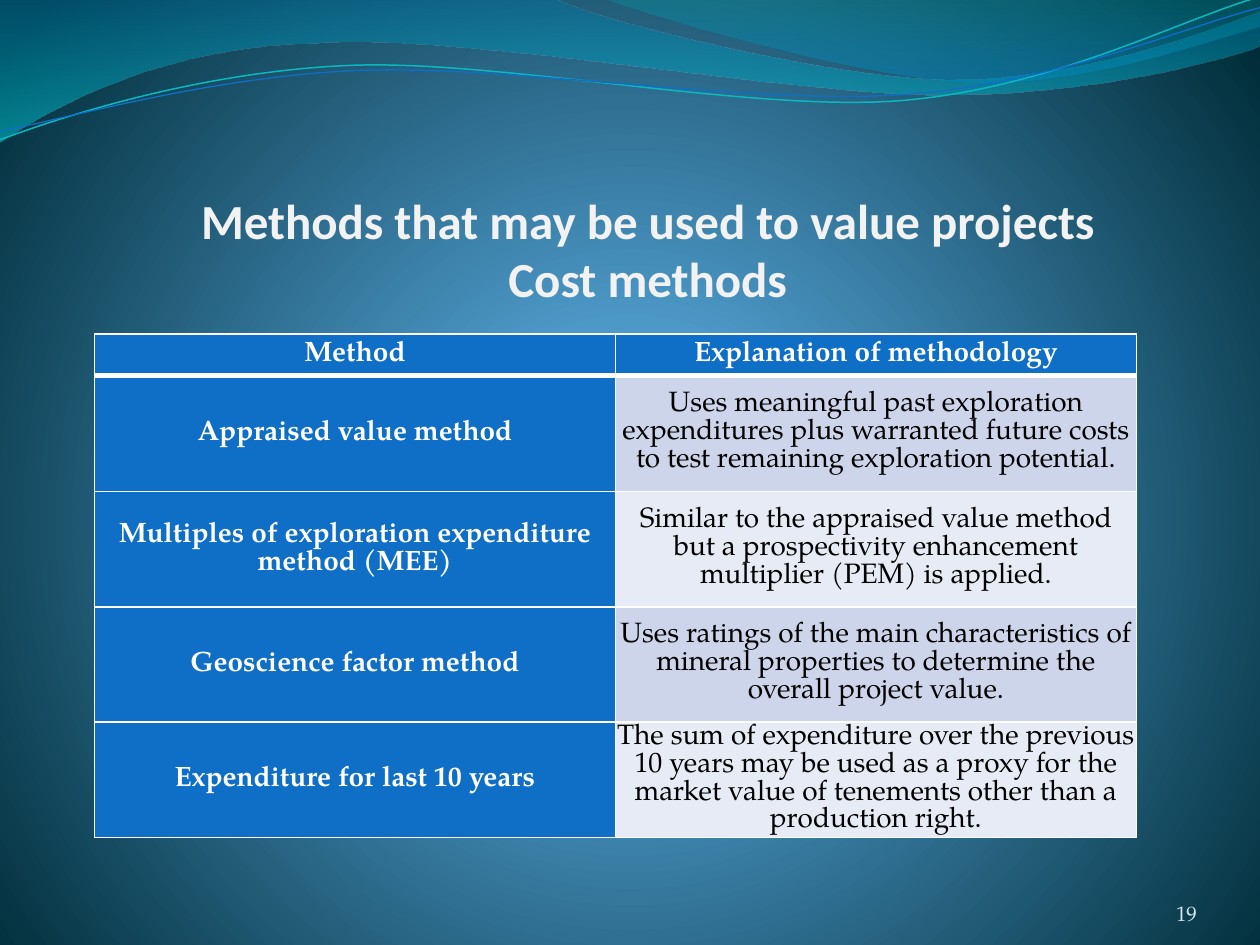
import math

from lxml import etree
from pptx import Presentation, util as u
from pptx.dml.color import RGBColor
from pptx.enum import text as t
from pptx.oxml import ns

WHITE = RGBColor(0xFF, 0xFF, 0xFF)
BLACK = RGBColor(0, 0, 0)
BLUE = RGBColor(0x0F, 0x6F, 0xC6)
TEAL = RGBColor(0x0A, 0xB8, 0xBF)
PALE = RGBColor(0xF2, 0xF2, 0xF2)
MIST = RGBColor(0xD1, 0xEA, 0xEE)
BANDS = RGBColor(0xCC, 0xD5, 0xEA), RGBColor(0xE7, 0xEB, 0xF5)
SERIF, SANS = "TeX Gyre Pagella", "Calibri"
TILT = 357.3

ROWS = [
    ("Method", "Explanation of methodology"),
    ("Appraised value method",
     "Uses meaningful past exploration expenditures plus warranted future "
     "costs to test remaining exploration potential."),
    ("Multiples of exploration expenditure method (MEE)",
     "Similar to the appraised value method but a prospectivity enhancement "
     "multiplier (PEM) is applied."),
    ("Geoscience factor method",
     "Uses ratings of the main characteristics of mineral properties to "
     "determine the overall project value."),
    ("Expenditure for last 10 years",
     "The sum of expenditure over the previous 10 years may be used as a "
     "proxy for the market value of tenements other than a production right."),
]
HEIGHTS = [0.33, 0.92, 0.92, 0.91, 0.92]

# Each curve is a start point, then steps of one point (line) or three (Bezier).
WIDE = [[(0, 0)], [(4.4, -0.01)],
        [(4.76, 0.17), (6.64, 0.63), (7.58, 0.63)],
        [(8.53, 0.63), (9.58, 0.26), (10, 0.09)], [(10.01, 0.36)],
        [(9.83, 0.44), (8.7, 0.76), (7.46, 0.75)],
        [(6.22, 0.75), (3.82, 0.28), (2.57, 0.34)],
        [(1.29, 0.36), (0.46, 0.83), (-0.01, 1.13)], [(0, 0)]]
SMALL = [[(4.79, -0.01)], [(5.09, 0.11), (6.82, 0.62), (7.69, 0.65)],
         [(8.56, 0.69), (9.61, 0.32), (10, 0.21)], [(10, 0)], [(4.79, -0.01)]]
UPPER = [[(0, 1.11)], [(0.48, 0.93), (1.58, 0.57), (2.77, 0.52)],
         [(3.95, 0.47), (5.93, 0.89), (7.13, 0.8)],
         [(8.33, 0.71), (9.38, 0.15), (9.98, -0.02)]]
LOWER = [[(0, 1.04)], [(0.47, 0.96), (1.64, 0.61), (2.83, 0.56)],
         [(4.03, 0.51), (5.97, 0.84), (7.17, 0.75)],
         [(8.36, 0.67), (9.41, 0.21), (10, 0.06)]]


def node(root, tag, **attrs):
    return etree.SubElement(root, ns.qn(tag), {k: str(v) for k, v in attrs.items()})


def clear(root):
    for child in list(root):
        root.remove(child)


def shade(root, stops, centre=None):
    """Fill the first gradient in root with (percent, hex, opacity) stops."""
    grad = root.xpath(".//a:gradFill")[0]
    clear(grad)
    group = node(grad, "a:gsLst")
    for pos, tone, alpha in stops:
        stop = node(group, "a:gs", pos=pos * 1000)
        color = node(stop, "a:srgbClr", val=tone)
        if alpha < 100:
            node(color, "a:alpha", val=alpha * 1000)
    if centre:
        ring = node(grad, "a:path", path="circle")
        node(ring, "a:fillToRect", **{k: v * 1000 for k, v in zip("ltrb", centre)})
    else:
        node(grad, "a:lin", ang=90 * 60000, scaled=1)


def local(point, box, turn):
    """Move a slide point into the frame of a box that is turned by degrees."""
    left, top, width, height = box
    angle = math.radians(-turn)
    x, y = point[0] - left - width / 2, point[1] - top - height / 2
    return (u.Inches(x * math.cos(angle) - y * math.sin(angle) + width / 2),
            u.Inches(x * math.sin(angle) + y * math.cos(angle) + height / 2))


def write(frame, *lines, font=SERIF, size=16, color=WHITE, bold=False,
          align=t.PP_ALIGN.CENTER, gap=0, pitch=None):
    for i, line in enumerate(lines):
        para = frame.add_paragraph() if i else frame.paragraphs[0]
        para.alignment = align
        para.space_before = para.space_after = u.Pt(gap)
        if pitch:
            para.line_spacing = u.Pt(pitch)
        run = para.add_run()
        run.text = line
        run.font.name, run.font.size = font, u.Pt(size)
        run.font.bold, run.font.color.rgb = bold, color


def edge(cell, **widths):
    """Draw white borders; keys are the sides L, R, T and B in points."""
    props = cell._tc.get_or_add_tcPr()
    for i, side in enumerate("LRTB"):
        line = etree.Element(ns.qn("a:ln" + side), w=str(u.Pt(widths.get(side, 1))))
        node(node(line, "a:solidFill"), "a:srgbClr", val=str(WHITE))
        props.insert(i, line)


class Deck:
    def __init__(self):
        self.file = Presentation()
        self.file.slide_width, self.file.slide_height = u.Inches(10), u.Inches(7.5)
        self.slide = self.file.slides.add_slide(self.file.slide_layouts[5])
        self.shapes = self.slide.shapes

    def ground(self, stops, centre):
        self.slide.background.fill.gradient()
        shade(self.slide.element, stops, centre)

    def curve(self, curve, box, close, turn=0):
        left, top, width, height = map(u.Inches, box)
        pen = self.shapes.build_freeform(left, top, scale=1)
        pen.add_line_segments([(left + width, top + height)], close=close)
        shape = pen.convert_to_shape()
        shape.shadow.inherit = False
        shape.rotation = turn
        track = shape._element.xpath(".//a:path")[0]
        clear(track)
        for i, step in enumerate(curve):
            tag = "cubicBezTo" if len(step) == 3 else "lnTo" if i else "moveTo"
            part = node(track, "a:" + tag)
            for point in step:
                x, y = local(point, box, turn)
                node(part, "a:pt", x=x, y=y)
        if close:
            node(track, "a:close")
        return shape

    def wave(self, curve, box, stops):
        shape = self.curve(curve, box, True)
        shape.line.fill.background()
        shape.fill.gradient()
        shade(shape._element, stops)

    def strand(self, curve, box, color, width):
        shape = self.curve(curve, box, False, TILT)
        shape.fill.background()
        shape.line.color.rgb, shape.line.width = color, u.Pt(width)

    def title(self, box, *lines):
        shape = self.shapes.title
        shape.left, shape.top, shape.width, shape.height = map(u.Inches, box)
        frame = shape.text_frame
        frame.word_wrap = False
        frame.auto_size = t.MSO_AUTO_SIZE.SHAPE_TO_FIT_TEXT
        frame.vertical_anchor = t.MSO_ANCHOR.MIDDLE
        write(frame, *lines, font=SANS, size=28, color=PALE, bold=True)

    def number(self, box, label):
        frame = self.shapes.add_textbox(*map(u.Inches, box)).text_frame
        frame.word_wrap = True
        frame.margin_left = frame.margin_right = 0
        frame.margin_top = frame.margin_bottom = 0
        frame.vertical_anchor = t.MSO_ANCHOR.BOTTOM
        write(frame, label, size=12, color=MIST, align=t.PP_ALIGN.RIGHT)

    def table(self, box, rows, heights):
        grid = self.shapes.add_table(
            len(rows), len(rows[0]), *map(u.Inches, box)).table
        for i, (row, height) in enumerate(zip(rows, heights)):
            grid.rows[i].height = u.Inches(height)
            for j, words in enumerate(row):
                cell = grid.cell(i, j)
                head = i == 0 or j == 0
                cell.fill.solid()
                cell.fill.fore_color.rgb = BLUE if head else BANDS[(i - 1) % 2]
                cell.margin_left = cell.margin_right = u.Inches(0.01)
                cell.margin_top = cell.margin_bottom = u.Inches(0.01)
                cell.vertical_anchor = t.MSO_ANCHOR.MIDDLE
                write(cell.text_frame, words, color=WHITE if head else BLACK,
                      bold=head, gap=3, pitch=16)
                edge(cell, T=3 if i == 1 else 1, B=3 if i == 0 else 1)


def main():
    deck = Deck()
    deck.ground([(0, "4AA0D6", 100), (25, "4C98C7", 100), (100, "002C38", 100)],
                (10, 110, 10, 100))
    deck.wave(WIDE, (-0.01, -0.01, 10.02, 1.14),
              [(0, "0074A1", 45), (100, "00C6CF", 55)])
    deck.wave(SMALL, (4.79, -0.01, 5.21, 0.7),
              [(0, "00A1A9", 30), (80, "008BBF", 45)])
    deck.strand(UPPER, (-0.02, 0.22, 10.02, 0.71), TEAL, 0.85)
    deck.strand(LOWER, (-0.02, 0.3, 10.03, 0.58), BLUE, 0.75)
    deck.number((8.67, 6.95, 0.83, 0.4), "19")
    deck.table((0.75, 2.65, 8.27, 4.18), ROWS, HEIGHTS)
    deck.title((1.45, 1.46, 7.38, 1.03),
               "Methods that may be used to value projects", "Cost methods")
    deck.file.save("out.pptx")


if __name__ == "__main__":
    main()
